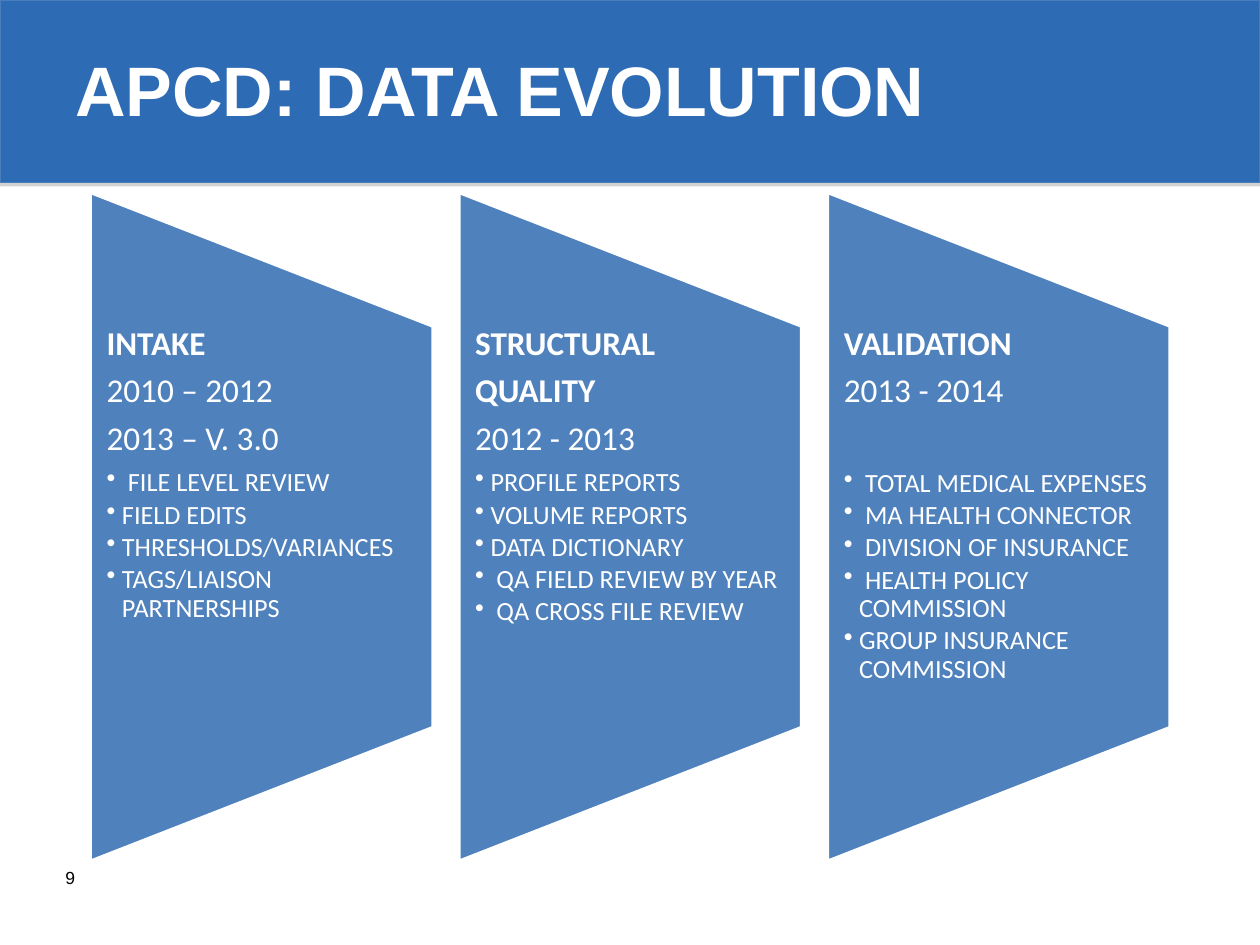
"""Build the data evolution slide with three phase panels."""
from dataclasses import dataclass

import pptx
import pptx.dml.color
import pptx.enum.shapes
import pptx.enum.text
import pptx.oxml
import pptx.oxml.ns
import pptx.util
from pptx.util import Cm, Pt


@dataclass(frozen=True)
class Theme:
    """Colours, fonts and type sizes of the slide."""
    banner: str = "2D6BB5"
    banner_line: str = "4A7EBB"
    shadow: str = "808080"
    panel: str = "4F81BD"
    light: str = "FFFFFF"
    dark: str = "000000"
    title_font: str = "Arial"
    body_font: str = "Calibri"
    title_size: int = 40
    heading_size: int = 19
    bullet_size: int = 15
    number_size: int = 10


THEME = Theme()
PANEL_LEFT, PANEL_PITCH, PANEL_CENTER = 1.82, 7.43, 10.62
PANEL_WIDTH, PANEL_HEIGHT = 6.91, 13.49
TEXT_TOP, TEXT_HEIGHT = 6.58, 8.08
HEADING_ROWS = 3
HEADING_GAP = 0.35 * THEME.heading_size
BULLET_GAP = 0.15 * THEME.bullet_size
HEADING_PITCH = 1.1 * THEME.heading_size + HEADING_GAP

PHASES = [
    (["INTAKE"], ["2010 – 2012", "2013 – V. 3.0"],
     [" FILE LEVEL REVIEW", "FIELD EDITS", "THRESHOLDS/VARIANCES",
      "TAGS/LIAISON PARTNERSHIPS"]),
    (["STRUCTURAL", "QUALITY"], ["2012 - 2013"],
     ["PROFILE REPORTS", "VOLUME REPORTS", "DATA DICTIONARY",
      " QA FIELD REVIEW BY YEAR", " QA CROSS FILE REVIEW"]),
    (["VALIDATION"], ["2013 - 2014"],
     [" TOTAL MEDICAL EXPENSES", " MA HEALTH CONNECTOR",
      " DIVISION OF INSURANCE", " HEALTH POLICY COMMISSION",
      "GROUP INSURANCE COMMISSION"]),
]


def color(value):
    """Return the colour object for a hex value."""
    return pptx.dml.color.RGBColor.from_string(value)


def set_font(paragraph, name, size, value, bold=False):
    """Set the font of a whole paragraph."""
    font = paragraph.font
    font.name, font.size, font.bold = name, Pt(size), bold
    font.color.rgb = color(value)


def add_filled_shape(slide, kind, box, fill, line, line_width):
    """Add a preset shape with a plain fill and outline."""
    shape = slide.shapes.add_shape(kind, *map(Cm, box))
    shape.shadow.inherit = False
    shape.fill.solid()
    shape.fill.fore_color.rgb = color(fill)
    shape.line.color.rgb = color(line)
    shape.line.width = Pt(line_width)
    return shape


def add_text_box(slide, box):
    """Add a wrapping text box and return its text frame."""
    frame = slide.shapes.add_textbox(*map(Cm, box)).text_frame
    frame.word_wrap = True
    return frame


def add_banner(slide):
    """Add the title banner with its lower shadow."""
    banner = add_filled_shape(
        slide, pptx.enum.shapes.MSO_SHAPE.RECTANGLE, (0, 0, 25.4, 3.68),
        THEME.banner, THEME.banner_line, 0.75)
    effects = banner._element.spPr.find(pptx.oxml.ns.qn("a:effectLst"))
    effects.append(pptx.oxml.parse_xml(
        f'<a:outerShdw {pptx.oxml.ns.nsdecls("a")} blurRad="0" dist="{Pt(1.8)}"'
        f' dir="5400000" rotWithShape="0"><a:srgbClr val="{THEME.shadow}">'
        '<a:alpha val="35000"/></a:srgbClr></a:outerShdw>'))
    frame = add_text_box(slide, (1.27, 0.2, 22.86, 3.18))
    frame.vertical_anchor = pptx.enum.text.MSO_ANCHOR.MIDDLE
    paragraph = frame.paragraphs[0]
    paragraph.text = "APCD: DATA EVOLUTION"
    set_font(paragraph, THEME.title_font, THEME.title_size, THEME.light, True)


def add_slide_number(slide):
    """Add the slide number at the lower left."""
    paragraph = add_text_box(slide, (1.07, 17.35, 5.92, 1.02)).paragraphs[0]
    paragraph.text = "9"
    set_font(paragraph, THEME.title_font, THEME.number_size, THEME.dark)


def add_bullet(paragraph):
    """Give a paragraph a hanging bullet."""
    paragraph.level = 1
    properties = paragraph._p.get_or_add_pPr()
    properties.set("marL", str(Cm(0.31)))
    properties.set("indent", str(-Cm(0.31)))
    properties.append(pptx.oxml.parse_xml(
        f'<a:buChar {pptx.oxml.ns.nsdecls("a")} char="•"/>'))


def add_phase(slide, index, names, dates, items):
    """Add one phase panel with its headings and bullets."""
    left = PANEL_LEFT + index * PANEL_PITCH
    panel = add_filled_shape(
        slide, pptx.enum.shapes.MSO_SHAPE.FLOWCHART_MANUAL_OPERATION,
        (left + (PANEL_WIDTH - PANEL_HEIGHT) / 2,
         PANEL_CENTER - PANEL_WIDTH / 2, PANEL_HEIGHT, PANEL_WIDTH),
        THEME.panel, THEME.light, 2)
    panel.rotation = 270

    frame = add_text_box(slide, (left, TEXT_TOP, PANEL_WIDTH, TEXT_HEIGHT))
    frame.margin_left = frame.margin_right = Cm(0.33)
    frame.margin_top = frame.margin_bottom = 0
    headings = names + dates
    lines = headings + items
    frame.text = "\n".join(lines)
    for row, paragraph in enumerate(frame.paragraphs):
        is_item = row >= len(headings)
        paragraph.line_spacing = 0.9
        paragraph.space_after = Pt(BULLET_GAP if is_item else HEADING_GAP)
        if is_item:
            add_bullet(paragraph)
        size = THEME.bullet_size if is_item else THEME.heading_size
        set_font(paragraph, THEME.body_font, size, THEME.light, row < len(names))
    missing_rows = HEADING_ROWS - len(headings)
    frame.paragraphs[len(headings) - 1].space_after = Pt(
        HEADING_GAP + missing_rows * HEADING_PITCH)


def main():
    """Build and save the presentation."""
    presentation = pptx.Presentation()
    presentation.slide_width, presentation.slide_height = Cm(25.4), Cm(19.05)
    slide = presentation.slides.add_slide(presentation.slide_layouts[6])
    add_banner(slide)
    add_slide_number(slide)
    for index, phase in enumerate(PHASES):
        add_phase(slide, index, *phase)
    presentation.save("out.pptx")


if __name__ == "__main__":
    main()
